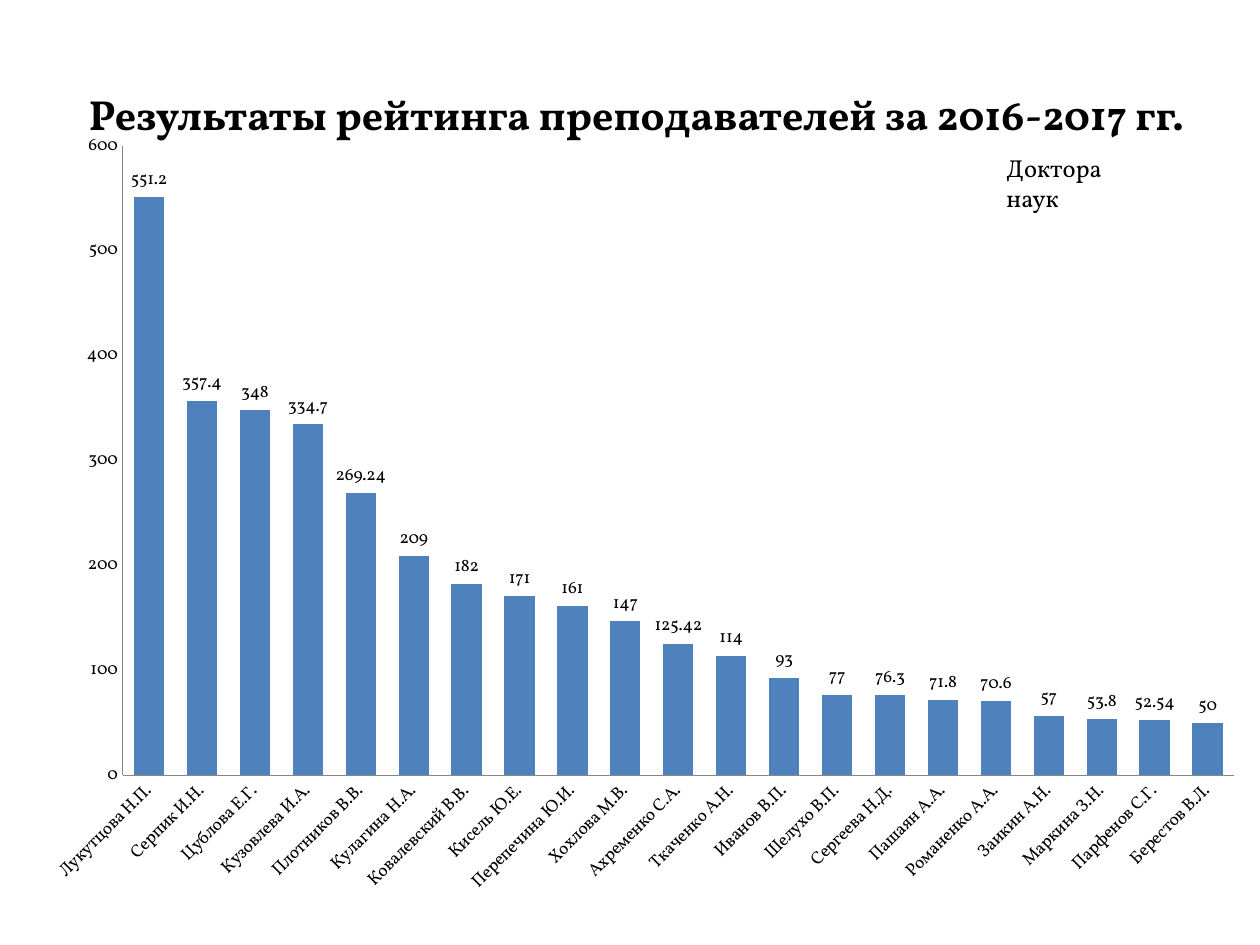
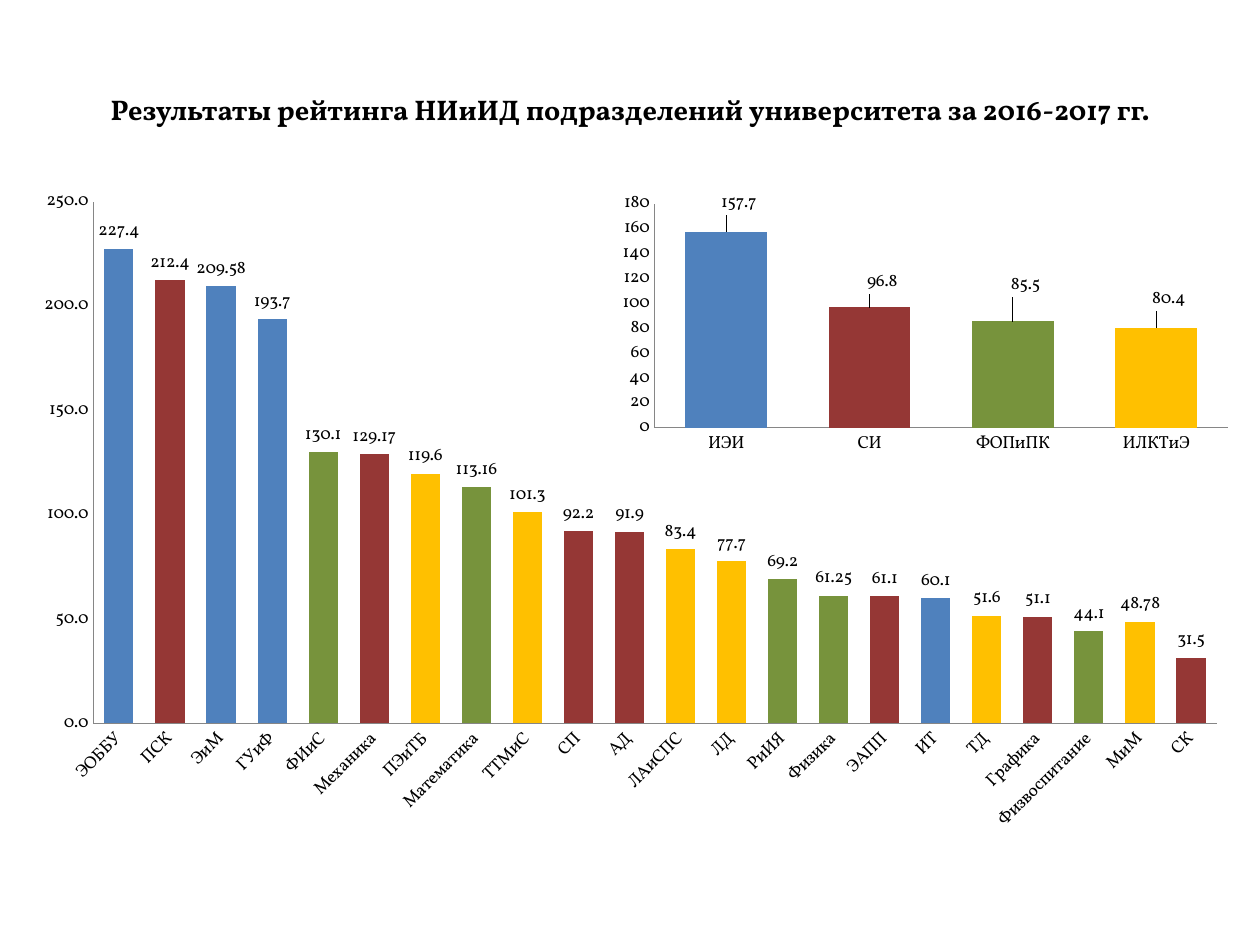
from dataclasses import dataclass

from lxml import etree
from pptx import Presentation
from pptx.chart.data import CategoryChartData
from pptx.dml.color import RGBColor
from pptx.enum.chart import XL_CHART_TYPE, XL_LABEL_POSITION, XL_TICK_MARK
from pptx.enum.text import MSO_ANCHOR, MSO_AUTO_SIZE, PP_ALIGN
from pptx.oxml import parse_xml
from pptx.oxml.ns import nsdecls, qn
from pptx.util import Pt

COLUMNS = XL_CHART_TYPE.COLUMN_CLUSTERED
OUTSIDE_END = XL_LABEL_POSITION.OUTSIDE_END
NO_TICKS = XL_TICK_MARK.NONE
MIDDLE, TOP = MSO_ANCHOR.MIDDLE, MSO_ANCHOR.TOP
CENTER, LEFT = PP_ALIGN.CENTER, PP_ALIGN.LEFT
NO_AUTOFIT = MSO_AUTO_SIZE.NONE
TITLE_ONLY = 5


@dataclass(frozen=True)
class Theme:
    font: str = "Vollkorn"
    text: RGBColor = RGBColor(0x00, 0x00, 0x00)
    axis: RGBColor = RGBColor(0x86, 0x86, 0x86)
    blue: RGBColor = RGBColor(0x4F, 0x81, 0xBD)
    red: RGBColor = RGBColor(0x95, 0x37, 0x35)
    green: RGBColor = RGBColor(0x77, 0x93, 0x3C)
    yellow: RGBColor = RGBColor(0xFF, 0xC0, 0x00)
    title_size: float = 24
    long_title_size: float = 16.2
    note_size: float = 14
    chart_size: float = 10


THEME = Theme()

# Each institute's colour also marks its departments
INSTITUTE_COLORS = {"ИЭИ": THEME.blue, "СИ": THEME.red,
                    "ФОПиПК": THEME.green, "ИЛКТиЭ": THEME.yellow}

TEACHERS = [
    ("Лукутцова Н.П.", 551.2), ("Серпик И.Н.", 357.4), ("Цублова Е.Г.", 348),
    ("Кузовлева И.А.", 334.7), ("Плотников В.В.", 269.24),
    ("Кулагина Н.А.", 209), ("Ковалевский В.В.", 182), ("Кисель Ю.Е.", 171),
    ("Перепечина Ю.И.", 161), ("Хохлова М.В.", 147),
    ("Ахременко С.А.", 125.42), ("Ткаченко А.Н.", 114), ("Иванов В.П.", 93),
    ("Шелухо В.П.", 77), ("Сергеева Н.Д.", 76.3), ("Пашаян А.А.", 71.8),
    ("Романенко А.А.", 70.6), ("Заикин А.Н.", 57), ("Маркина З.Н.", 53.8),
    ("Парфенов С.Г.", 52.54), ("Берестов В.Л.", 50),
]

DEPARTMENTS = [
    ("ЭОББУ", 227.4, "ИЭИ"), ("ПСК", 212.4, "СИ"), ("ЭиМ", 209.58, "ИЭИ"),
    ("ГУиФ", 193.7, "ИЭИ"), ("ФИиС", 130.1, "ФОПиПК"),
    ("Механика", 129.17, "СИ"), ("ПЭиТБ", 119.6, "ИЛКТиЭ"),
    ("Математика", 113.16, "ФОПиПК"), ("ТТМиС", 101.3, "ИЛКТиЭ"),
    ("СП", 92.2, "СИ"), ("АД", 91.9, "СИ"), ("ЛАиСПС", 83.4, "ИЛКТиЭ"),
    ("ЛД", 77.7, "ИЛКТиЭ"), ("РиИЯ", 69.2, "ФОПиПК"),
    ("Физика", 61.25, "ФОПиПК"), ("ЭАПП", 61.1, "СИ"), ("ИТ", 60.1, "ИЭИ"),
    ("ТД", 51.6, "ИЛКТиЭ"), ("Графика", 51.1, "СИ"),
    ("Физвоспитание", 44.1, "ФОПиПК"), ("МиМ", 48.78, "ИЛКТиЭ"),
    ("СК", 31.5, "СИ"),
]

INSTITUTES = [("ИЭИ", 157.7), ("СИ", 96.8), ("ФОПиПК", 85.5), ("ИЛКТиЭ", 80.4)]
INSTITUTE_LABEL_SHIFTS = [(0.02, -0.04), (0.02, -0.03), (0.02, -0.07), (0.02, -0.04)]


def style_font(font, size, bold=False):
    font.name = THEME.font
    font.size = Pt(size)
    font.bold = bold
    font.color.rgb = THEME.text


def write_text(shape, text, size, bold=False, align=LEFT, anchor=TOP):
    frame = shape.text_frame
    frame.text = text
    frame.word_wrap = True
    frame.auto_size = NO_AUTOFIT
    frame.vertical_anchor = anchor
    paragraph = frame.paragraphs[0]
    paragraph.alignment = align
    style_font(paragraph.runs[0].font, size, bold)


def add_titled_slide(presentation, text, box, size):
    slide = presentation.slides.add_slide(presentation.slide_layouts[TITLE_ONLY])
    title = slide.shapes.title
    title.left, title.top, title.width, title.height = map(Pt, box)
    title.text_frame.margin_left = title.text_frame.margin_right = 0
    write_text(title, text, size, True, CENTER, MIDDLE)
    return slide


def manual_layout(inner=False, **fractions):
    """Layout element with fractions of the chart's size."""
    target = '<c:layoutTarget val="inner"/>' if inner else ""
    modes = '<c:xMode val="edge"/><c:yMode val="edge"/>' if inner else ""
    values = "".join(f'<c:{key} val="{value}"/>' for key, value in fractions.items())
    return parse_xml(f'<c:layout {nsdecls("c")}><c:manualLayout>'
                     f'{target}{modes}{values}</c:manualLayout></c:layout>')


def place_plot(chart, left, top, width, height):
    plot_area = chart.element.xpath("./c:chart/c:plotArea")[0]
    for layout in plot_area.findall(qn("c:layout")):
        plot_area.remove(layout)
    plot_area.insert(0, manual_layout(True, x=left, y=top, w=width, h=height))


def shift_labels(chart, shifts):
    labels = chart.element.xpath(".//c:ser/c:dLbls")[0]
    for index, (x, y) in enumerate(shifts):
        label = etree.Element(qn("c:dLbl"))
        etree.SubElement(label, qn("c:idx")).set("val", str(index))
        label.append(manual_layout(x=x, y=y))
        etree.SubElement(label, qn("c:dLblPos")).set("val", "outEnd")
        for part in ("LegendKey", "Val", "CatName", "SerName", "Percent", "BubbleSize"):
            shown = "1" if part == "Val" else "0"
            etree.SubElement(label, qn(f"c:show{part}")).set("val", shown)
        labels.insert(index, label)


def style_axes(chart, maximum, step, number_format, slanted):
    value_axis, category_axis = chart.value_axis, chart.category_axis
    value_axis.minimum_scale = 0
    value_axis.maximum_scale = maximum
    value_axis.major_unit = step
    value_axis.has_major_gridlines = False
    value_axis.tick_labels.number_format = number_format
    value_axis.tick_labels.number_format_is_linked = False
    for axis in (value_axis, category_axis):
        axis.major_tick_mark = axis.minor_tick_mark = NO_TICKS
        axis.format.line.color.rgb = THEME.axis
        axis.format.line.width = Pt(0.75)
        style_font(axis.tick_labels.font, THEME.chart_size)
    if slanted:
        body = chart.element.xpath(".//c:catAx/c:txPr/a:bodyPr")[0]
        body.set("rot", str(-45 * 60000))
        body.set("vert", "horz")


def add_rating_chart(slide, box, plot_box, rows, maximum, step,
                     number_format="General", slanted=True, colors=()):
    """Column chart of (name, value) rows, with optional colours by column."""
    data = CategoryChartData()
    data.categories = [row[0] for row in rows]
    data.add_series("Series 1", [row[1] for row in rows])
    chart = slide.shapes.add_chart(COLUMNS, *map(Pt, box), data).chart
    chart.has_title = chart.has_legend = False
    style_font(chart.font, THEME.chart_size)

    # Columns
    plot = chart.plots[0]
    plot.gap_width = 75
    plot.vary_by_categories = False
    series = plot.series[0]
    series.format.fill.solid()
    series.format.fill.fore_color.rgb = THEME.blue
    for index, color in enumerate(colors):
        if color != THEME.blue:
            fill = series.points[index].format.fill
            fill.solid()
            fill.fore_color.rgb = color

    # Value labels
    labels = series.data_labels
    labels.show_value = True
    labels.position = OUTSIDE_END
    style_font(labels.font, THEME.chart_size)

    style_axes(chart, maximum, step, number_format, slanted)
    place_plot(chart, *plot_box)
    return chart


def build_teachers_slide(presentation):
    slide = add_titled_slide(
        presentation, "Результаты рейтинга преподавателей за 2016-2017 гг.",
        (39.6, 39.6, 648, 50.4), THEME.title_size)
    note = slide.shapes.add_textbox(Pt(568), Pt(84.2), Pt(94), Pt(24.5))
    write_text(note, "Доктора наук", THEME.note_size)
    add_rating_chart(slide, (16.6, 67.7, 703.4, 452.9), (0.076, 0.035, 0.903, 0.794),
                     TEACHERS, 600, 100)


def build_departments_slide(presentation):
    slide = add_titled_slide(
        presentation,
        "Результаты рейтинга НИиИД подразделений университета за 2016-2017 гг.",
        (36, 39.6, 648, 45.4), THEME.long_title_size)
    add_rating_chart(slide, (11.5, 101.5, 697.7, 382.3), (0.06, 0.036, 0.92, 0.78),
                     DEPARTMENTS, 250, 50, number_format="0.0",
                     colors=[INSTITUTE_COLORS[row[2]] for row in DEPARTMENTS])
    # Institutes, in the free corner of the departments chart
    institutes = add_rating_chart(
        slide, (348.5, 106.6, 360, 157.7), (0.071, 0.063, 0.91, 0.812),
        INSTITUTES, 180, 20, slanted=False, colors=INSTITUTE_COLORS.values())
    shift_labels(institutes, INSTITUTE_LABEL_SHIFTS)


def main():
    presentation = Presentation()
    presentation.slide_width, presentation.slide_height = Pt(720), Pt(540)
    build_teachers_slide(presentation)
    build_departments_slide(presentation)
    presentation.save("out.pptx")


if __name__ == "__main__":
    main()
